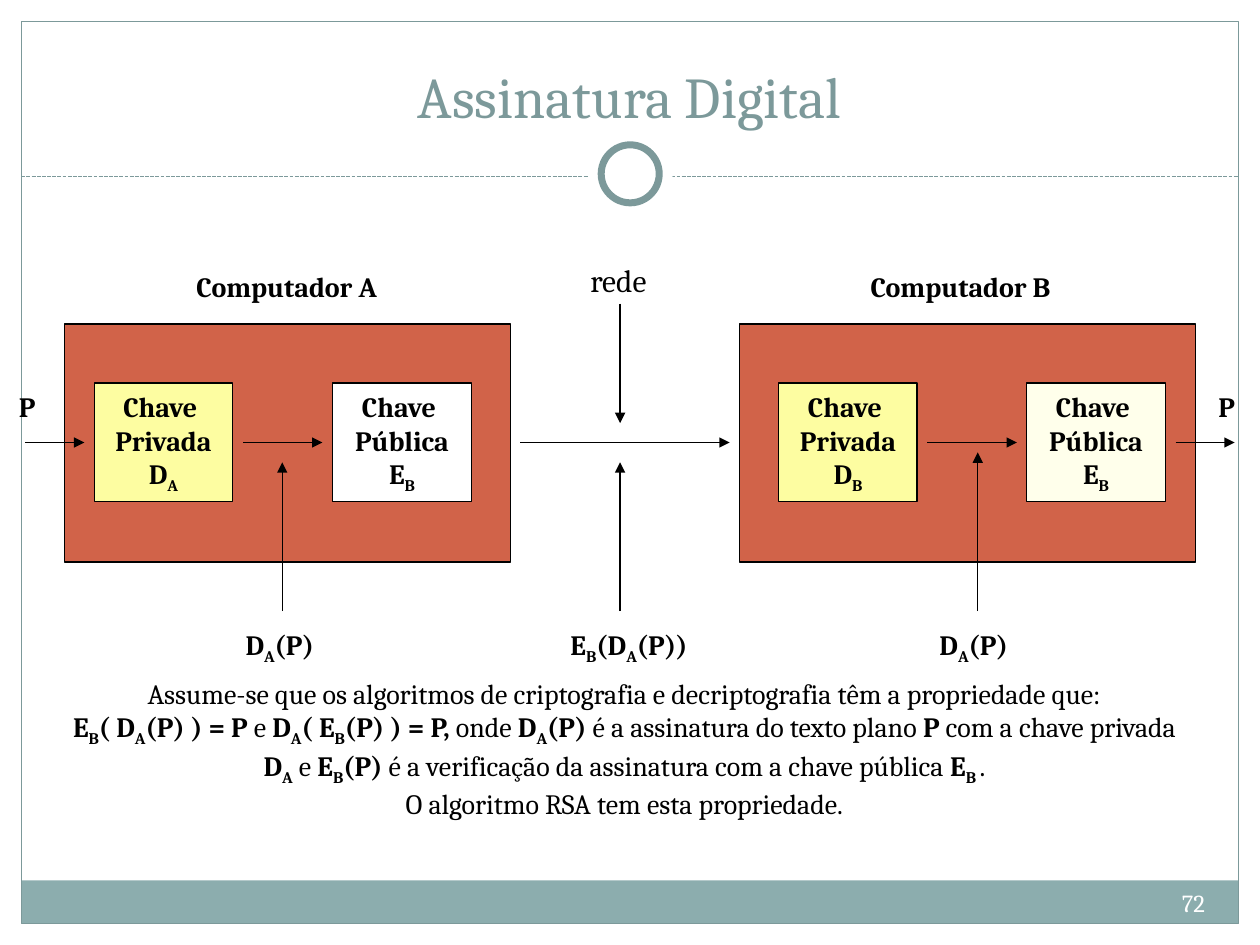
from lxml.etree import SubElement
from pptx import Presentation
from pptx.dml.color import RGBColor
from pptx.enum.dml import MSO_LINE
from pptx.enum.shapes import MSO_CONNECTOR, MSO_SHAPE
from pptx.enum.text import MSO_ANCHOR, PP_ALIGN
from pptx.oxml.ns import qn
from pptx.util import Cm, Pt

FONT = "Cambria"
BLACK = RGBColor(0x00, 0x00, 0x00)
WHITE = RGBColor(0xFF, 0xFF, 0xFF)
IVORY = RGBColor(0xFF, 0xFF, 0xEB)
YELLOW = RGBColor(0xFD, 0xFD, 0xA1)
RED = RGBColor(0xD1, 0x63, 0x49)
TEAL = RGBColor(0x7C, 0x99, 0x9A)
LIGHT_TEAL = RGBColor(0x8C, 0xAD, 0xAE)

prs = Presentation()
prs.slide_width, prs.slide_height = Cm(25.4), Cm(19.05)
s = prs.slides.add_slide(prs.slide_layouts[6])


def write(sp, text, size=16, color=BLACK, align=PP_ALIGN.LEFT,
          anchor=MSO_ANCHOR.TOP, wrap=True):
    """Fill a shape with text: *bold*, |subscript|, newline for a line break."""
    tf = sp.text_frame
    tf.word_wrap = wrap
    tf.vertical_anchor = anchor
    p = tf.paragraphs[0]
    p.alignment = align
    for i, part in enumerate(text.split("*")):
        for j, piece in enumerate(part.split("|")):
            for k, line in enumerate(piece.split("\n")):
                if k:
                    p.add_line_break()
                if not line:
                    continue
                r = p.add_run()
                r.text = line
                r.font.name, r.font.size = FONT, Pt(size)
                r.font.bold = i % 2 == 1
                r.font.color.rgb = color
                if j % 2:
                    r.font._element.set("baseline", "-25000")


def add_line(x1, y1, x2, y2, color=BLACK):
    ln = s.shapes.add_connector(MSO_CONNECTOR.STRAIGHT,
                                Cm(x1), Cm(y1), Cm(x2), Cm(y2))
    ln.line.color.rgb = color
    ln.line.width = Pt(0.75)
    SubElement(ln._element.spPr, qn("a:effectLst"))
    return ln


# Frame, footer band, divider and ring, then the two computers
RECT, OVAL = MSO_SHAPE.RECTANGLE, MSO_SHAPE.OVAL
add_line(0.43, 3.56, 24.97, 3.56, TEAL).line.dash_style = MSO_LINE.SQUARE_DOT
for kind, x, y, w, h, fill, line, weight in [
    (RECT, 0.43, 17.75, 24.54, 0.87, LIGHT_TEAL, None, 0),
    (RECT, 0.43, 0.43, 24.54, 18.19, None, TEAL, 0.75),
    (OVAL, 11.86, 2.67, 1.7, 1.7, WHITE, None, 0),
    (OVAL, 12.12, 2.92, 1.17, 1.17, WHITE, TEAL, 4),
    (RECT, 1.3, 6.53, 8.99, 4.8, RED, BLACK, 0.75),
    (RECT, 14.91, 6.53, 9.19, 4.8, RED, BLACK, 0.75),
]:
    sp = s.shapes.add_shape(kind, Cm(x), Cm(y), Cm(w), Cm(h))
    sp.shadow.inherit = False
    if fill is None:
        sp.fill.background()
    else:
        sp.fill.solid()
        sp.fill.fore_color.rgb = fill
    if line is None:
        sp.line.fill.background()
    else:
        sp.line.color.rgb = line
        sp.line.width = Pt(weight)

# Keys inside the computers
for x, fill, text in [
    (1.9, YELLOW, "*Chave \nPrivada\nD|A|*"),
    (6.71, WHITE, "*Chave \nPública\nE|B|*"),
    (15.7, YELLOW, "*Chave \nPrivada\nD|B|*"),
    (20.7, IVORY, "*Chave \nPública\nE|B|*"),
]:
    sp = s.shapes.add_shape(RECT, Cm(x), Cm(7.72), Cm(2.79), Cm(2.39))
    sp.shadow.inherit = False
    sp.fill.solid()
    sp.fill.fore_color.rgb = fill
    sp.line.color.rgb = BLACK
    sp.line.width = Pt(0.75)
    write(sp, text, align=PP_ALIGN.CENTER, anchor=MSO_ANCHOR.MIDDLE, wrap=False)

# Arrows: the message flow, then the pointers to each stage
FLOW_Y = 8.92
flow = [(0.51, 1.7), (4.9, 6.5), (10.49, 14.71), (18.69, 20.5), (23.7, 24.89)]
pointers = [(5.69, 12.32, 9.32), (12.5, 12.32, 9.32),
            (19.71, 12.32, 9.12), (12.5, 6.12, 8.53)]
arrows = [(x1, FLOW_Y, x2, FLOW_Y) for x1, x2 in flow]
arrows += [(x, y1, x, y2) for x, y1, y2 in pointers]
for ends in arrows:
    ln = add_line(*ends)
    SubElement(ln.line._get_or_add_ln(), qn("a:tailEnd"), type="triangle")

# Labels
for x, y, w, text, size in [
    (0.13, 7.72, 1.02, "*P*", 16),
    (24.31, 7.72, 1.09, "*P*", 16),
    (3.71, 5.31, 4.6, "*Computador A*", 16),
    (17.3, 5.31, 4.8, "*Computador B*", 16),
    (11.65, 5.13, 2.59, "rede", 18),
    (4.7, 12.52, 2.39, "*D|A|(P)*", 16),
    (11.25, 12.52, 3.51, "*E|B|(D|A|(P))*", 16),
    (18.69, 12.52, 2.29, "*D|A|(P)*", 16),
]:
    write(s.shapes.add_textbox(Cm(x), Cm(y), Cm(w), Cm(0.94)), text, size)

# Title, explanation and page number
sp = s.shapes.add_textbox(Cm(0.84), Cm(0.64), Cm(23.7), Cm(2.11))
write(sp, "Assinatura Digital", 33, TEAL, PP_ALIGN.CENTER, MSO_ANCHOR.BOTTOM)

sp = s.shapes.add_textbox(Cm(0.69), Cm(13.51), Cm(23.8), Cm(4.11))
write(sp,
      "Assume-se que os algoritmos de criptografia e decriptografia "
      "têm a propriedade que:\n"
      "*E|B|( D|A|(P) ) = P* e *D|A|( E|B|(P) ) = P,* onde *D|A|(P)* "
      "é a assinatura do texto plano *P* com a chave privada\n"
      "*D|A|* e *E|B|(P)* é a verificação da assinatura "
      "com a chave pública *E|B |*.\n"
      "O algoritmo RSA tem esta propriedade.",
      align=PP_ALIGN.CENTER)

sp = s.shapes.add_textbox(Cm(16.08), Cm(17.78), Cm(8.46), Cm(1.02))
write(sp, "72", 14, WHITE, PP_ALIGN.RIGHT)

prs.save("out.pptx")
